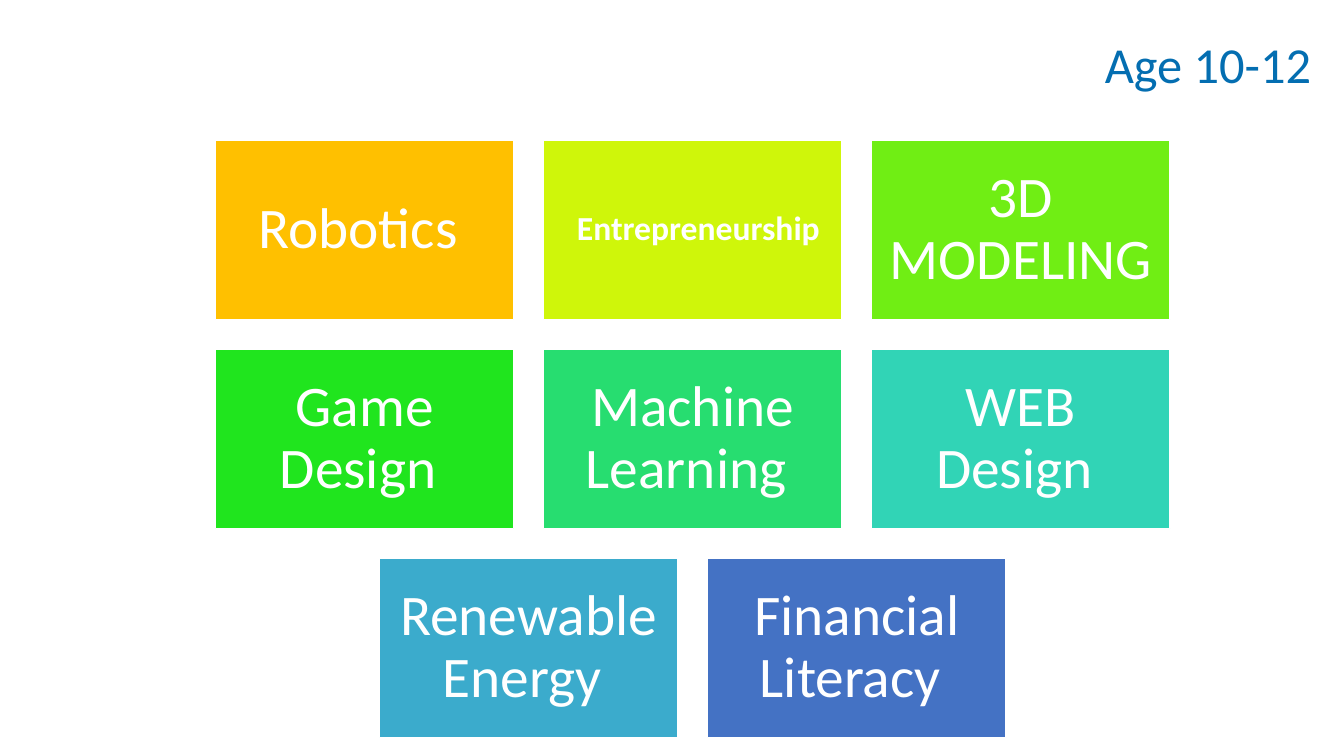
"""Build the slide of course tiles for ages 10-12."""
from pptx import Presentation
from pptx.dml.color import RGBColor as Rgb
from pptx.enum.shapes import MSO_SHAPE as Shape
from pptx.enum.text import MSO_ANCHOR as Anchor, MSO_AUTO_SIZE as Fit, PP_ALIGN as Align
from pptx.util import Cm, Pt

TITLE = "Age 10-12"
SMALL = "Entrepreneurship"
ROWS = [
    [("Robotics ", Rgb(0xFF, 0xC0, 0x00)),
     (SMALL, Rgb(0xCF, 0xF6, 0x0A)),
     ("3D MODELING ", Rgb(0x70, 0xEE, 0x14))],
    [("Game Design ", Rgb(0x20, 0xE5, 0x1E)),
     ("Machine Learning ", Rgb(0x27, 0xDD, 0x70)),
     ("WEB Design ", Rgb(0x31, 0xD4, 0xB6))],
    [("Renewable Energy ", Rgb(0x3B, 0xAB, 0xCC)),
     ("Financial Literacy ", Rgb(0x44, 0x72, 0xC4))],
]
WHITE = Rgb(0xFF, 0xFF, 0xFF)
BLUE = Rgb(0x04, 0x6E, 0xB1)
FONT = "Calibri"
MID, TOP = 17.46, 3.53
WIDE, HIGH, GAP = 7.52, 4.52, 0.75
PAD = 0.43


def style(frame, size, color, align, bold=False):
    para = frame.paragraphs[0]
    para.alignment = align
    para.line_spacing = 0.9
    para.space_before = Pt(0)
    font = para.runs[0].font
    font.name, font.size, font.bold = FONT, Pt(size), bold
    font.color.rgb = color


def add_title(slide):
    title = slide.shapes.title
    title.left, title.top = Cm(9.4), Cm(0.86)
    title.width, title.height = Cm(23.9), Cm(1.65)
    frame = title.text_frame
    frame.text = TITLE
    frame.auto_size = Fit.NONE
    frame.vertical_anchor = Anchor.MIDDLE
    style(frame, 36, BLUE, Align.RIGHT)


def add_tile(slide, left, top, text, color):
    tile = slide.shapes.add_shape(Shape.RECTANGLE, Cm(left), Cm(top), Cm(WIDE), Cm(HIGH))
    tile.shadow.inherit = False
    tile.fill.solid()
    tile.fill.fore_color.rgb = color
    tile.line.color.rgb = WHITE
    tile.line.width = Pt(1)
    frame = tile.text_frame
    frame.text = text
    frame.word_wrap = True
    frame.vertical_anchor = Anchor.MIDDLE
    frame.margin_left = frame.margin_right = Cm(PAD)
    frame.margin_top = frame.margin_bottom = Cm(PAD)
    if text == SMALL:
        frame.margin_left, frame.margin_right = Cm(0.84), Cm(0.25)
        style(frame, 24, WHITE, Align.LEFT, True)
    else:
        style(frame, 41, WHITE, Align.CENTER)


def main():
    deck = Presentation()
    deck.slide_width, deck.slide_height = Cm(33.87), Cm(19.05)
    slide = deck.slides.add_slide(deck.slide_layouts[5])
    add_title(slide)
    for i, row in enumerate(ROWS):
        start = MID - (len(row) * (WIDE + GAP) - GAP) / 2
        for j, (text, color) in enumerate(row):
            add_tile(slide, start + j * (WIDE + GAP), TOP + i * (HIGH + GAP), text, color)
    deck.save("out.pptx")


if __name__ == "__main__":
    main()
